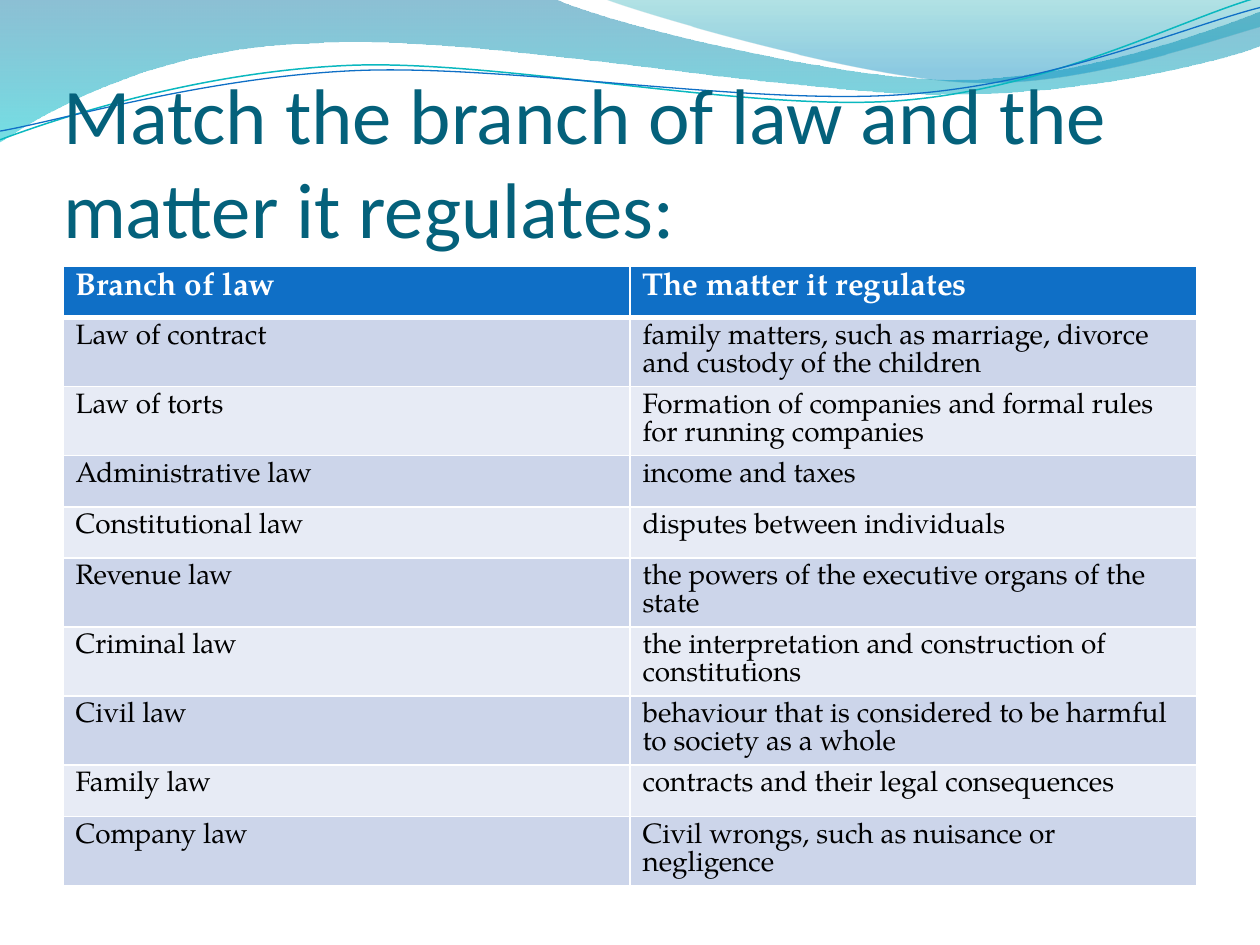
from lxml import etree
from pptx import Presentation
from pptx.dml.color import RGBColor
from pptx.enum.text import MSO_ANCHOR, MSO_AUTO_SIZE, PP_ALIGN
from pptx.oxml.ns import qn
from pptx.util import Pt

BOTTOM, LEFT, NO_AUTOFIT = MSO_ANCHOR.BOTTOM, PP_ALIGN.LEFT, MSO_AUTO_SIZE.NONE
TITLE_ONLY_LAYOUT = 5
FIRST_WAVE_ID = 101
TITLE_FONT, TABLE_FONT = "Calibri", "TeX Gyre Pagella"
WHITE, BLACK, BLUE, TEAL = "FFFFFF", "000000", "0F6FC6", "04617B"
BANDS = ["CCD5EA", "E7EBF5"]

# Outlines in points: one pair is a straight step, three pairs a Bezier curve.
LEFT_WAVE = [
    [(0, 0)], [(316.8, -0.7)],
    [(342.7, 12.2), (478.1, 45.4), (545.8, 45.4)], [(614.2, 45.4), (689.8, 18.7), (720, 6.5)],
    [(720.7, 25.9)],
    [(707.8, 31.7), (626.4, 54.7), (537.1, 54)], [(447.8, 54), (275, 20.2), (185, 24.5)],
    [(92.9, 25.9), (33.1, 59.8), (-0.7, 81.4)],
]
RIGHT_WAVE = [
    [(344.9, -0.7)],
    [(366.5, 7.9), (491, 44.6), (553.7, 46.8)], [(616.3, 49.7), (691.9, 23), (720, 15.1)],
    [(720, 0)],
]
AQUA_RIPPLE = [
    [(0, 79.9)],
    [(34.6, 67), (113.8, 41), (199.4, 37.4)], [(284.4, 33.8), (427, 64.1), (513.4, 57.6)],
    [(599.8, 51.1), (675.4, 10.8), (718.6, -1.4)],
]
BLUE_RIPPLE = [
    [(0, 74.9)],
    [(33.8, 69.1), (118.1, 43.9), (203.8, 40.3)], [(290.2, 36.7), (429.8, 60.5), (516.2, 54)],
    [(601.9, 48.2), (677.5, 15.1), (720, 4.3)],
]
# Stops: position, colour, opacity in percent.
WAVES = [
    (LEFT_WAVE, [(0, "0074A1", 45), (1, "00C6CF", 55)]),
    (RIGHT_WAVE, [(0, "00A1A9", 30), (0.8, "008BBF", 45)]),
]
RIPPLES = [(AQUA_RIPPLE, "0AB8BF", 0.85), (BLUE_RIPPLE, BLUE, 0.75)]

HEADINGS = ("Branch of law", "The matter it regulates")
BRANCHES = [
    ("Law of contract", "family matters, such as marriage, divorce and custody of the children"),
    ("Law of torts", "Formation of companies and formal rules for running companies"),
    ("Administrative law", "income and taxes"),
    ("Constitutional law", "disputes between individuals"),
    ("Revenue law", "the powers of the executive organs of the state"),
    ("Criminal law", "the interpretation and construction of constitutions"),
    ("Civil law", "behaviour that is considered to be harmful to society as a whole"),
    ("Family law", "contracts and their legal consequences"),
    ("Company law", "Civil wrongs, such as nuisance or negligence"),
]


def color(hex_code):
    return RGBColor.from_string(hex_code)


def add_run(paragraph, text, font_name, size, hex_code, bold=False):
    run = paragraph.add_run()
    run.text = text
    run.font.name = font_name
    run.font.size = Pt(size)
    run.font.bold = bold
    run.font.color.rgb = color(hex_code)


def add_outline(slide, left, top, outline, close):
    """Draw all points as a polygon, then join each triple into one Bezier step."""
    points = [(Pt(left + x), Pt(top + y)) for step in outline for x, y in step]
    builder = slide.shapes.build_freeform(*points[0])
    builder.add_line_segments(points[1:], close=close)
    shape = builder.convert_to_shape()
    shape.shadow.inherit = False
    line_steps = shape._element.spPr.iter(qn("a:lnTo"))
    remaining = iter(list(line_steps))
    for step in outline[1:]:
        first, *others = [next(remaining) for _ in step]
        if others:
            curve = etree.Element(qn("a:cubicBezTo"))
            first.addprevious(curve)
            for corner in (first, *others):
                curve.append(corner[0])
                corner.getparent().remove(corner)
    return shape


def add_waves(slide, left, top):
    """Draw the waves and put them on the master, behind its placeholders."""
    shapes = []
    for outline, stops in WAVES:
        wave = add_outline(slide, left, top, outline, close=True)
        wave.line.fill.background()
        wave.fill.gradient()
        wave.fill.gradient_angle = 270
        for stop, (position, hex_code, _) in zip(wave.fill.gradient_stops, stops):
            stop.position = position
            stop.color.rgb = color(hex_code)
        for tint, (_, _, opacity) in zip(wave._element.spPr.iter(qn("a:srgbClr")), stops):
            etree.SubElement(tint, qn("a:alpha"), val=str(opacity * 1000))
        shapes.append(wave)
    for outline, hex_code, width in RIPPLES:
        ripple = add_outline(slide, left, top, outline, close=False)
        ripple.fill.background()
        ripple.line.color.rgb = color(hex_code)
        ripple.line.width = Pt(width)
        shapes.append(ripple)
    master_tree = slide.slide_layout.slide_master.shapes._spTree
    for i, shape in enumerate(shapes):
        shape._element.nvSpPr.cNvPr.set("id", str(FIRST_WAVE_ID + i))
        master_tree.insert(2 + i, shape._element)


def place_title(slide, left, top, width, height):
    title = slide.shapes.title
    title.left, title.top, title.width, title.height = map(Pt, (left, top, width, height))
    frame = title.text_frame
    frame.auto_size = NO_AUTOFIT
    frame.word_wrap = True
    frame.vertical_anchor = BOTTOM
    frame.margin_left = frame.margin_right = frame.margin_bottom = 0
    frame.margin_top = Pt(3.6)
    paragraph = frame.paragraphs[0]
    paragraph.alignment = LEFT
    add_run(paragraph, "Match the branch of law and the matter it regulates:",
            TITLE_FONT, 45, TEAL)


def set_borders(cell, top, bottom):
    properties = cell._tc.get_or_add_tcPr()
    for side, width in (("lnL", 1), ("lnR", 1), ("lnT", top), ("lnB", bottom)):
        border = etree.SubElement(properties, qn(f"a:{side}"), w=str(Pt(width)))
        fill = etree.SubElement(border, qn("a:solidFill"))
        etree.SubElement(fill, qn("a:srgbClr"), val=WHITE)


def add_branch_table(slide, left, top, width, row_height):
    rows = [HEADINGS] + BRANCHES
    table = slide.shapes.add_table(len(rows), len(HEADINGS), Pt(left), Pt(top),
                                   Pt(width), Pt(row_height * len(rows))).table
    for r, texts in enumerate(rows):
        is_header = r == 0
        size, spacing = (18, 18) if is_header else (16, 16.1)
        for c, text in enumerate(texts):
            cell = table.cell(r, c)
            set_borders(cell, top=3 if r == 1 else 1, bottom=3 if is_header else 1)
            cell.fill.solid()
            cell.fill.fore_color.rgb = color(BLUE if is_header else BANDS[(r - 1) % 2])
            paragraph = cell.text_frame.paragraphs[0]
            paragraph.line_spacing = Pt(spacing)
            add_run(paragraph, text, TABLE_FONT, size, WHITE if is_header else BLACK, is_header)


def main():
    presentation = Presentation()
    presentation.slide_width, presentation.slide_height = Pt(720), Pt(540)
    slide = presentation.slides.add_slide(presentation.slide_layouts[TITLE_ONLY_LAYOUT])
    add_waves(slide, 0, 0)
    place_title(slide, 36, 55.5, 648, 90)
    add_branch_table(slide, 36, 152.2, 648, 29.3)
    presentation.save("out.pptx")


if __name__ == "__main__":
    main()
